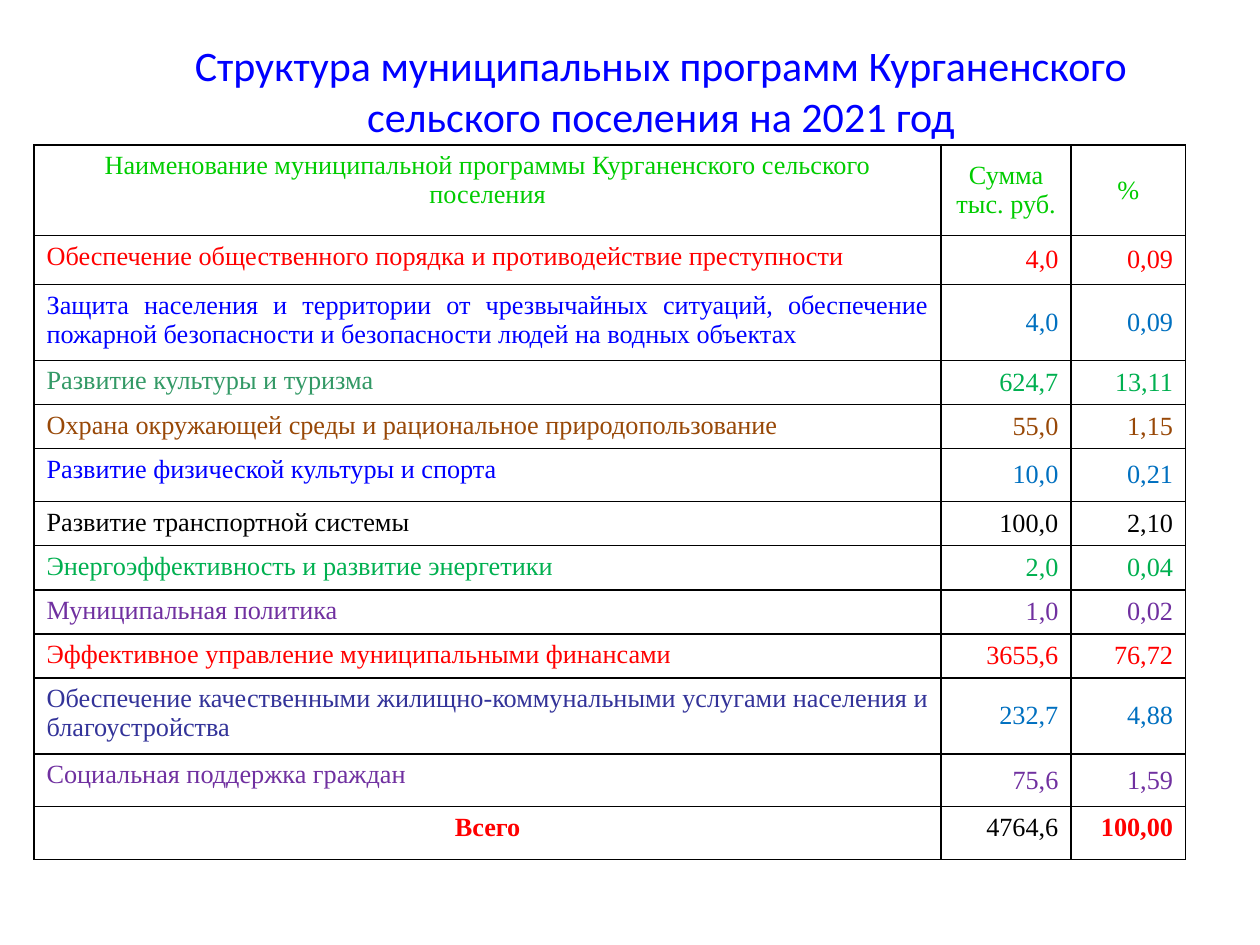
import dataclasses

import pptx
import pptx.dml.color
import pptx.enum.text
import pptx.oxml.ns
import pptx.util
from lxml import etree

Inches = pptx.util.Inches
Pt = pptx.util.Pt
Align = pptx.enum.text.PP_ALIGN
Anchor = pptx.enum.text.MSO_ANCHOR


@dataclasses.dataclass(frozen=True)
class Theme:
    title_font: str = "Calibri"
    table_font: str = "Times New Roman"
    title_size: int = 24
    table_size: int = 15
    border_width: int = 1
    blue: str = "0000FF"
    lime: str = "00CC00"
    red: str = "FF0000"
    sky: str = "0070C0"
    sea: str = "339966"
    green: str = "00B050"
    brown: str = "984807"
    black: str = "000000"
    purple: str = "7030A0"
    indigo: str = "333399"


THEME = Theme()
TITLE = "Структура муниципальных программ Курганенского сельского поселения на 2021 год"
HEADINGS = ("Наименование муниципальной программы Курганенского сельского поселения",
            "Сумма тыс. руб.", "%")
COLUMN_WIDTHS = (7.2, 1.03, 0.91)
HEADING_HEIGHT = 0.72
TOTAL_HEIGHT = 0.42

# Row height, programme, amount, share, programme colour, figure colour
PROGRAMMES = (
    (0.39, "Обеспечение общественного порядка и противодействие преступности",
     "4,0", "0,09", THEME.red, THEME.red),
    (0.56, "Защита населения и территории от чрезвычайных ситуаций, обеспечение "
     "пожарной безопасности и безопасности людей на водных объектах",
     "4,0", "0,09", THEME.blue, THEME.sky),
    (0.33, "Развитие культуры и туризма", "624,7", "13,11", THEME.sea, THEME.green),
    (0.33, "Охрана окружающей среды и рациональное природопользование",
     "55,0", "1,15", THEME.brown, THEME.brown),
    (0.42, "Развитие физической культуры и спорта",
     "10,0", "0,21", THEME.blue, THEME.sky),
    (0.33, "Развитие транспортной системы", "100,0", "2,10", THEME.black, THEME.black),
    (0.33, "Энергоэффективность и развитие энергетики",
     "2,0", "0,04", THEME.green, THEME.green),
    (0.33, "Муниципальная политика", "1,0", "0,02", THEME.purple, THEME.purple),
    (0.33, "Эффективное управление муниципальными финансами",
     "3655,6", "76,72", THEME.red, THEME.red),
    (0.56, "Обеспечение качественными жилищно-коммунальными услугами населения "
     "и благоустройства", "232,7", "4,88", THEME.indigo, THEME.sky),
    (0.42, "Социальная поддержка граждан", "75,6", "1,59", THEME.purple, THEME.purple),
)


def write(frame, text, font_name, size, color, align, anchor, bold=False):
    frame.word_wrap = True
    frame.vertical_anchor = anchor
    paragraph = frame.paragraphs[0]
    paragraph.text = text
    paragraph.alignment = align
    paragraph.font.name = font_name
    paragraph.font.size = Pt(size)
    paragraph.font.bold = bold
    paragraph.font.color.rgb = pptx.dml.color.RGBColor.from_string(color)


def add_borders(cell):
    qn = pptx.oxml.ns.qn
    properties = cell._tc.get_or_add_tcPr()
    for side in ("a:lnL", "a:lnR", "a:lnT", "a:lnB"):
        line = etree.SubElement(properties, qn(side), w=str(Pt(THEME.border_width)))
        fill = etree.SubElement(line, qn("a:solidFill"))
        etree.SubElement(fill, qn("a:srgbClr"), val=THEME.black)


def fill_cell(cell, text, color, align, anchor=Anchor.MIDDLE, bold=False):
    write(cell.text_frame, text, THEME.table_font, THEME.table_size,
          color, align, anchor, bold)
    cell.vertical_anchor = anchor
    add_borders(cell)
    cell.fill.background()


def add_title(slide):
    title = slide.shapes.add_textbox(Inches(1), Inches(0.28), Inches(8.49), Inches(0.87))
    write(title.text_frame, TITLE, THEME.title_font, THEME.title_size,
          THEME.blue, Align.CENTER, Anchor.MIDDLE)


def add_programme_table(slide):
    heights = [HEADING_HEIGHT, *(row[0] for row in PROGRAMMES), TOTAL_HEIGHT]
    budget = slide.shapes.add_table(
        len(heights), len(COLUMN_WIDTHS), Inches(0.27), Inches(1.15),
        Inches(sum(COLUMN_WIDTHS)), Inches(sum(heights))).table
    budget.first_row = False
    budget.horz_banding = False
    for column, width in zip(budget.columns, COLUMN_WIDTHS):
        column.width = Inches(width)
    for row, height in zip(budget.rows, heights):
        row.height = Inches(height)

    # Headings
    for index, heading in enumerate(HEADINGS):
        fill_cell(budget.cell(0, index), heading, THEME.lime, Align.CENTER,
                  Anchor.MIDDLE if index else Anchor.TOP)

    # Programmes
    for index, programme in enumerate(PROGRAMMES, start=1):
        _, name, amount, share, name_color, figure_color = programme
        fill_cell(budget.cell(index, 0), name, name_color, Align.JUSTIFY, Anchor.TOP)
        fill_cell(budget.cell(index, 1), amount, figure_color, Align.RIGHT)
        fill_cell(budget.cell(index, 2), share, figure_color, Align.RIGHT)

    # Total
    total = len(heights) - 1
    fill_cell(budget.cell(total, 0), "Всего", THEME.red, Align.CENTER, Anchor.TOP, True)
    fill_cell(budget.cell(total, 1), "4764,6", THEME.black, Align.RIGHT, Anchor.TOP)
    fill_cell(budget.cell(total, 2), "100,00", THEME.red, Align.RIGHT, Anchor.TOP, True)


def main():
    presentation = pptx.Presentation()
    presentation.slide_width = Inches(10)
    presentation.slide_height = Inches(7.5)
    slide = presentation.slides.add_slide(presentation.slide_layouts[6])
    add_title(slide)
    add_programme_table(slide)
    presentation.save("out.pptx")


if __name__ == "__main__":
    main()
